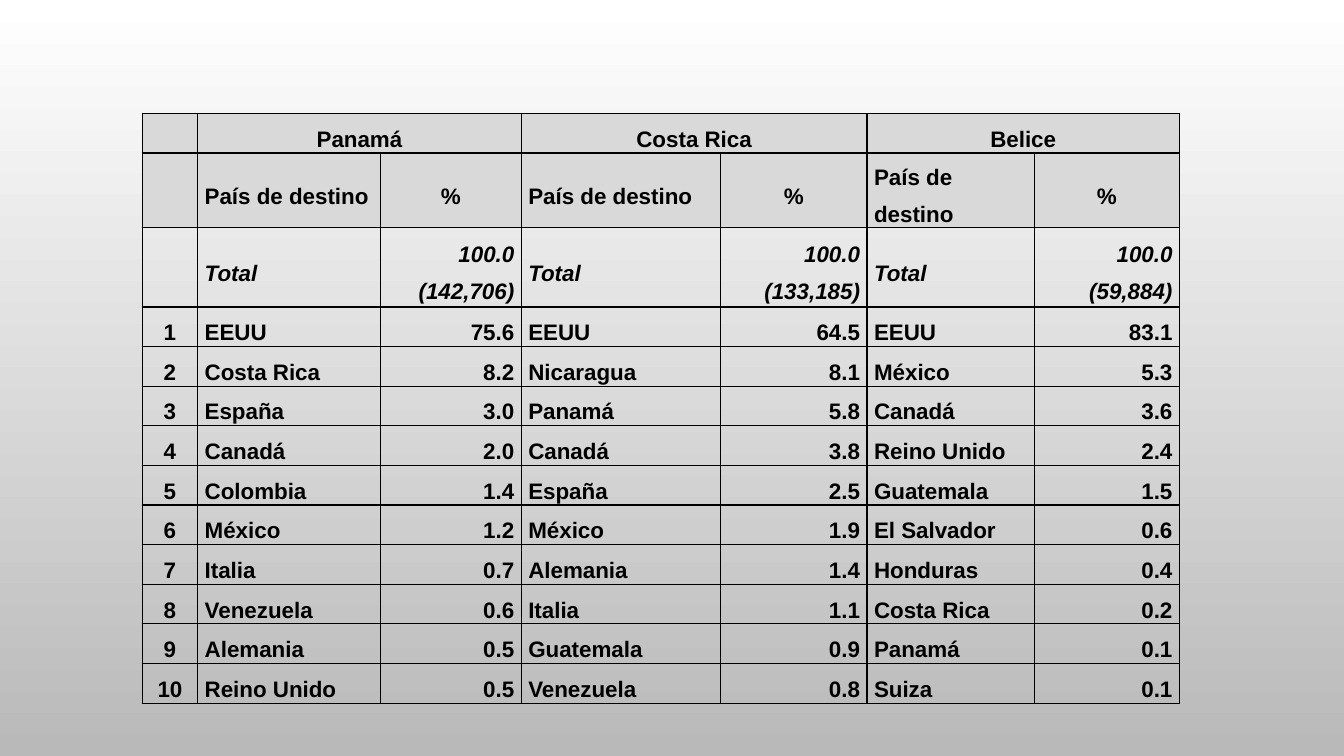
from lxml import etree
from pptx import Presentation
from pptx.dml.color import RGBColor
from pptx.enum.text import MSO_ANCHOR, PP_ALIGN
from pptx.oxml.ns import qn
from pptx.util import Inches, Pt

WHITE = RGBColor(0xFF, 0xFF, 0xFF)
SILVER = RGBColor(0xB9, 0xB9, 0xB9)
HEADER_GREY = RGBColor(0xD9, 0xD9, 0xD9)
BLACK = RGBColor(0, 0, 0)
LEFT, CENTER, RIGHT = PP_ALIGN.LEFT, PP_ALIGN.CENTER, PP_ALIGN.RIGHT
MIDDLE = MSO_ANCHOR.MIDDLE

# Shares of the slide, in percent
TABLE_LEFT, TABLE_TOP = 10.58, 15
COL_SHARES = [4.13, 13.58, 10.5, 14.85, 10.88, 12.45, 10.8]
ROW_SHARES = [5.24, 9.07, 10.5] + [5.24] * 10

COUNTRIES = ["Panamá", "Costa Rica", "Belice"]
TOTALS = ["100.0 (142,706)", "100.0 (133,185)", "100.0 (59,884)"]
DESTINATIONS = [
    ("EEUU", "75.6", "EEUU", "64.5", "EEUU", "83.1"),
    ("Costa Rica", "8.2", "Nicaragua", "8.1", "México", "5.3"),
    ("España", "3.0", "Panamá", "5.8", "Canadá", "3.6"),
    ("Canadá", "2.0", "Canadá", "3.8", "Reino Unido", "2.4"),
    ("Colombia", "1.4", "España", "2.5", "Guatemala", "1.5"),
    ("México", "1.2", "México", "1.9", "El Salvador", "0.6"),
    ("Italia", "0.7", "Alemania", "1.4", "Honduras", "0.4"),
    ("Venezuela", "0.6", "Italia", "1.1", "Costa Rica", "0.2"),
    ("Alemania", "0.5", "Guatemala", "0.9", "Panamá", "0.1"),
    ("Reino Unido", "0.5", "Venezuela", "0.8", "Suiza", "0.1"),
]
HEADER_ROWS, TOTAL_ROW = 2, 2


class Deck:
    """Holds the style and the current slide; lengths are percent of the slide."""

    font, size, spacing, border = "Arial", Pt(16), 1.5, Pt(1)

    def __init__(self, width, height):
        self.prs = Presentation()
        self.prs.slide_width, self.prs.slide_height = width, height
        self.s = self.prs.slides.add_slide(self.prs.slide_layouts[6])

    def x(self, share):
        return round(self.prs.slide_width * share / 100)

    def y(self, share):
        return round(self.prs.slide_height * share / 100)

    def background(self, top, bottom):
        fill = self.s.background.fill
        fill.gradient()
        fill.gradient_angle = 270
        for stop, color, position in zip(fill.gradient_stops, (top, bottom), (0, 1)):
            stop.color.rgb = color
            stop.position = position

    def table(self, left, top, cols, rows):
        """Add an unstyled table with the given column and row shares."""
        frame = self.s.shapes.add_table(
            len(rows), len(cols), self.x(left), self.y(top),
            self.x(sum(cols)), self.y(sum(rows)))
        table = frame.table
        table.first_row = table.horz_banding = False
        for col, share in zip(table.columns, cols):
            col.width = self.x(share)
        for row, share in zip(table.rows, rows):
            row.height = self.y(share)
        return table

    def cell(self, cell, text, align, fill=None, italic=False):
        cell.margin_left = cell.margin_right = Inches(0.07)
        cell.margin_top = cell.margin_bottom = 0
        cell.vertical_anchor = MIDDLE
        self.borders(cell)
        if fill is None:
            cell.fill.background()
        else:
            cell.fill.solid()
            cell.fill.fore_color.rgb = fill
        p = cell.text_frame.paragraphs[0]
        p.font.name, p.font.size = self.font, self.size
        p.font.bold, p.font.italic = True, italic
        p.font.color.rgb = BLACK
        if text:
            p.text = text
            p.alignment = align
            p.line_spacing = self.spacing

    def borders(self, cell):
        tc_pr = cell._tc.get_or_add_tcPr()
        for side in ("a:lnL", "a:lnR", "a:lnT", "a:lnB"):
            ln = etree.SubElement(tc_pr, qn(side), w=str(self.border))
            solid = etree.SubElement(ln, qn("a:solidFill"))
            etree.SubElement(solid, qn("a:srgbClr"), val=str(BLACK))


def table_rows():
    yield [""] + [text for country in COUNTRIES for text in (country, "")]
    yield [""] + ["País de destino", "%"] * len(COUNTRIES)
    yield [""] + [text for total in TOTALS for text in ("Total", total)]
    for rank, destinations in enumerate(DESTINATIONS, 1):
        yield [str(rank), *destinations]


def alignment(row, col):
    if row == 0 or col == 0:
        return CENTER
    if col % 2:
        return LEFT
    return CENTER if row < HEADER_ROWS else RIGHT


def main():
    deck = Deck(Inches(13.33), Inches(7.5))
    deck.background(WHITE, SILVER)
    table = deck.table(TABLE_LEFT, TABLE_TOP, COL_SHARES, ROW_SHARES)
    for r, texts in enumerate(table_rows()):
        for c, text in enumerate(texts):
            deck.cell(table.cell(r, c), text, alignment(r, c),
                      fill=HEADER_GREY if r < HEADER_ROWS else None,
                      italic=r == TOTAL_ROW)
    for c in range(1, len(COL_SHARES), 2):
        table.cell(0, c).merge(table.cell(0, c + 1))
    deck.prs.save("out.pptx")


if __name__ == "__main__":
    main()
